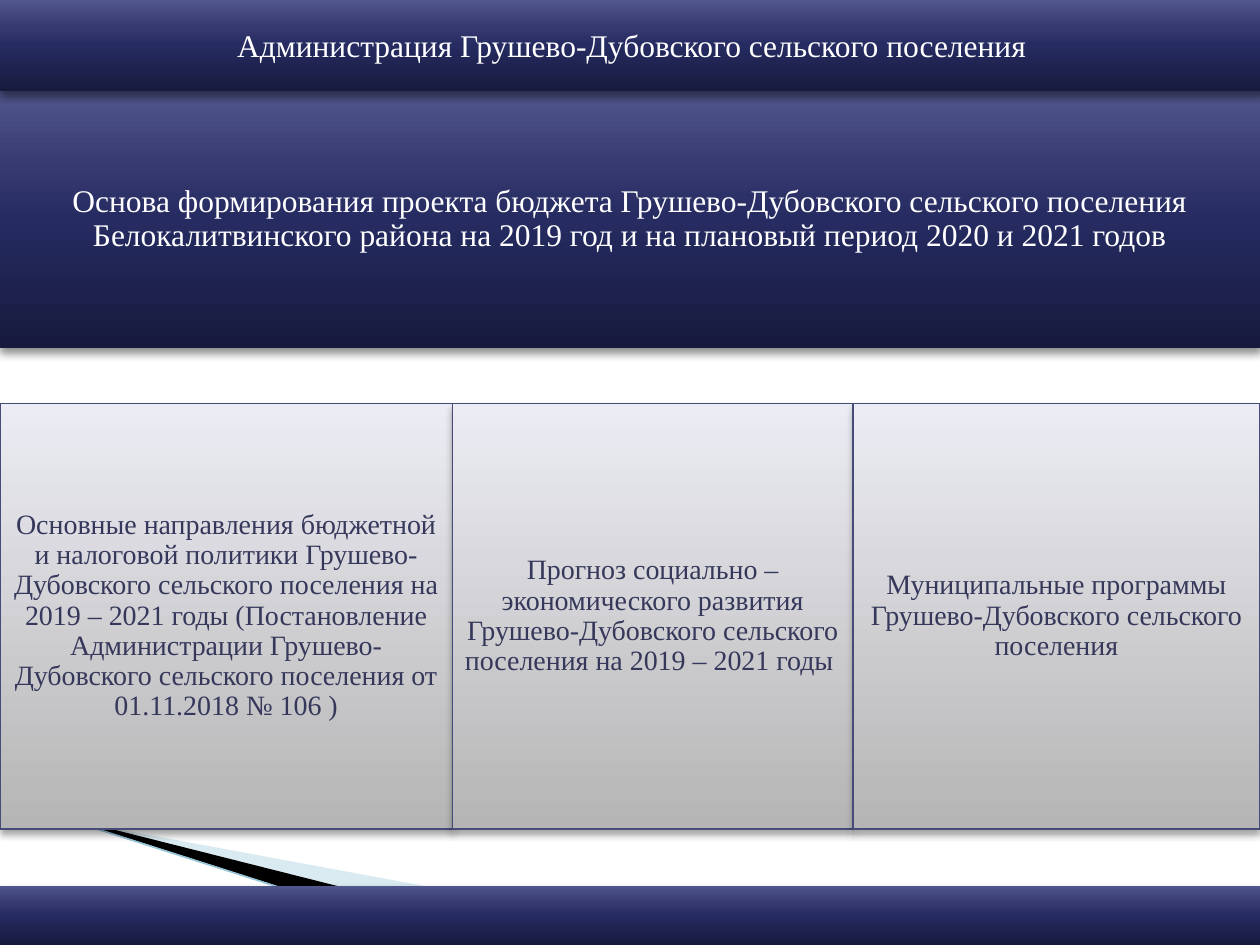
from lxml import etree
from pptx import Presentation
from pptx import util as u
from pptx.dml.color import RGBColor
from pptx.enum import shapes, text
from pptx.oxml.ns import qn

# Content
TITLE = "Администрация Грушево-Дубовского сельского поселения"
BASIS = ("Основа формирования проекта бюджета Грушево-Дубовского сельского поселения "
         "Белокалитвинского района на 2019 год и на плановый период 2020 и 2021 годов")
SOURCES = [  # (column width, text)
    (3.59, "Основные направления бюджетной и налоговой политики Грушево-Дубовского "
           "сельского поселения на 2019 – 2021 годы (Постановление Администрации "
           "Грушево-Дубовского сельского поселения от 01.11.2018 № 106 )"),
    (3.18, "Прогноз социально – экономического развития Грушево-Дубовского "
           "сельского поселения на 2019 – 2021 годы "),
    (3.23, "Муниципальные программы Грушево-Дубовского сельского поселения"),
]

# Layout and style
WIDTH, HEIGHT = 10, 7.5
TITLE_H, BASIS_H, FOOTER_H = 0.72, 2.04, 0.47
COLUMNS_TOP, COLUMNS_H = 3.2, 3.38
COLORS = {"white": "FFFFFF", "ink": "35385A", "border": "474B78", "black": "000000",
          "wedge": "A0CBDC", "edge": "97C5D8"}
NAVY = [(0, "171A3D"), (50, "262B61"), (70, "353970"), (100, "51568D")]
SILVER = [(0, "B5B5B5"), (100, "ECECF4")]
FONT = "Times New Roman"
WEDGES = [  # (colour, opacity %, outline)
    ("wedge", 40, [(0.55, 6.51), (5.95, 7.51), (4.56, 7.51), (0.55, 6.5)]),
    ("black", 100, [(0.53, 6.49), (4.57, 7.51), (3.72, 7.52), (0.54, 6.5)]),
]


def rgb(name):
    return RGBColor.from_string(COLORS[name])


def add_color(parent, value, opacity=100):
    color = etree.SubElement(parent, qn("a:srgbClr"), val=value)
    if opacity < 100:
        etree.SubElement(color, qn("a:alpha"), val=str(opacity * 1000))


def style_panel(panel, stops, border=None, opacity=45, blur=5):
    """Vertical gradient, optional border and a soft shadow below."""
    panel.fill.gradient()
    panel.fill.gradient_angle = 90
    stop_list = panel._element.spPr.find(qn("a:gradFill")).find(qn("a:gsLst"))
    for old in list(stop_list):
        stop_list.remove(old)
    for position, value in stops:
        stop = etree.SubElement(stop_list, qn("a:gs"), pos=str(position * 1000))
        add_color(stop, value)
    if border:
        panel.line.color.rgb = rgb(border)
        panel.line.width = u.Pt(0.75)
    else:
        panel.line.fill.background()
    panel.shadow.inherit = False
    effects = panel._element.spPr.find(qn("a:effectLst"))
    shadow = etree.SubElement(effects, qn("a:outerShdw"), blurRad=str(u.Pt(blur)),
                              dist=str(u.Pt(3)), dir="5400000", rotWithShape="0")
    add_color(shadow, COLORS["black"], opacity)


def write(panel, words, size=18, color="white", spacing=0.9, inset=0.07):
    frame = panel.text_frame
    frame.word_wrap = True
    frame.auto_size = text.MSO_AUTO_SIZE.NONE
    frame.vertical_anchor = text.MSO_ANCHOR.MIDDLE
    frame.margin_left = frame.margin_right = u.Inches(inset)
    frame.margin_top = frame.margin_bottom = u.Inches(min(inset, 0.07))
    paragraph = frame.paragraphs[0]
    paragraph.alignment = text.PP_ALIGN.CENTER
    paragraph.line_spacing = spacing
    run = paragraph.add_run()
    run.text = words
    run.font.name, run.font.size = FONT, u.Pt(size)
    run.font.color.rgb = rgb(color)


def add_panel(slide, left, top, width, height):
    return slide.shapes.add_shape(shapes.MSO_SHAPE.RECTANGLE,
                                  *map(u.Inches, (left, top, width, height)))


def main():
    prs = Presentation()
    prs.slide_width, prs.slide_height = u.Inches(WIDTH), u.Inches(HEIGHT)
    slide = prs.slides.add_slide(prs.slide_layouts[5])

    # Corner wedges
    for color, opacity, outline in WEDGES:
        points = [(u.Inches(x), u.Inches(y)) for x, y in outline]
        builder = slide.shapes.build_freeform(*points[0])
        builder.add_line_segments(points[1:], close=True)
        wedge = builder.convert_to_shape()
        wedge.fill.solid()
        wedge.fill.fore_color.rgb = rgb(color)
        if opacity < 100:
            fill_color = wedge._element.spPr.find(qn("a:solidFill"))[0]
            etree.SubElement(fill_color, qn("a:alpha"), val=str(opacity * 1000))
        wedge.line.fill.background()
        wedge.shadow.inherit = False
    edge = slide.shapes.add_connector(shapes.MSO_CONNECTOR.STRAIGHT,
                                      *map(u.Inches, (-0.01, 6.33, 3.71, 7.52)))
    edge.line.color.rgb = rgb("edge")
    edge.line.width = u.Pt(0.95)
    etree.SubElement(edge._element.spPr, qn("a:effectLst"))

    # Basis of the budget
    basis = add_panel(slide, 0, TITLE_H, WIDTH, BASIS_H)
    style_panel(basis, NAVY)
    write(basis, BASIS)

    # Three source columns
    left = 0
    for width, words in SOURCES:
        column = add_panel(slide, left, COLUMNS_TOP, width, COLUMNS_H)
        style_panel(column, SILVER, border="border", opacity=35, blur=4)
        write(column, words, size=16, color="ink")
        left += width

    # Footer band
    style_panel(add_panel(slide, 0, HEIGHT - FOOTER_H, WIDTH, FOOTER_H), NAVY)

    # Title band, in front so that its shadow falls on the panel below
    title = slide.shapes.title
    title.left, title.top = 0, 0
    title.width, title.height = u.Inches(10.03), u.Inches(TITLE_H)
    style_panel(title, NAVY)
    write(title, TITLE, spacing=1.0, inset=0.1)
    slide.shapes._spTree.append(title._element)

    prs.save("out.pptx")


if __name__ == "__main__":
    main()
